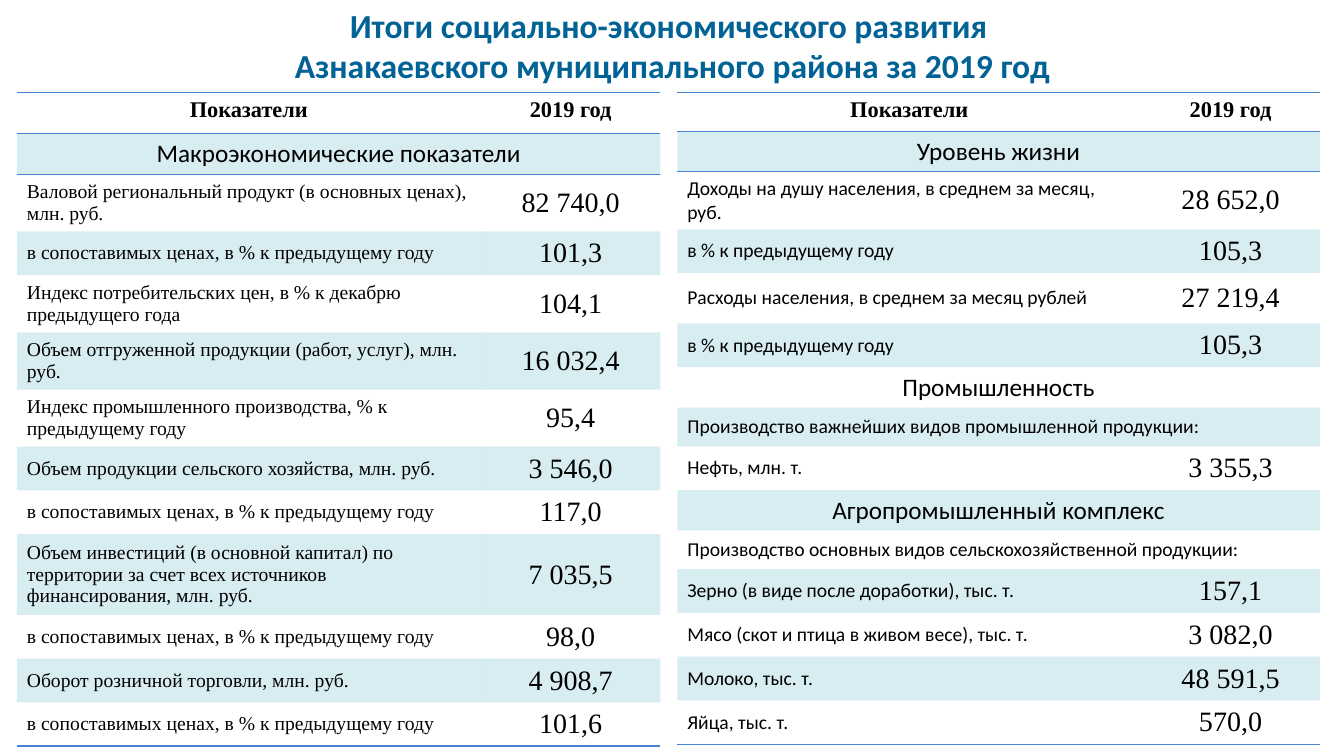
from dataclasses import dataclass
from lxml.etree import SubElement
from pptx import Presentation
from pptx.dml.color import RGBColor
from pptx.enum.text import MSO_ANCHOR, MSO_AUTO_SIZE, PP_ALIGN
from pptx.oxml.ns import qn
from pptx.util import Emu, Pt


@dataclass(frozen=True)
class Theme:
    title: str = "016296"
    text: str = "000000"
    band: str = "3EA6C2"
    band_alpha: int = 20
    rule: str = "4584D3"
    rule_pt: int = 1
    title_pt: int = 24
    header_pt: int = 16
    section_pt: int = 18
    label_pt: int = 14
    value_pt: int = 20
    sans: str = "Calibri"
    serif: str = "Times New Roman"
    no_grid_style: str = "{2D5ABB26-0587-4C30-8999-92F81FD0307C}"


@dataclass(frozen=True)
class Row:
    label: str
    value: str = ""
    height: int = 39
    section: bool = False


def px(n):
    return Emu(n * 9525)


class SlideBuilder:
    def __init__(self, slide, theme):
        self.s = slide
        self.theme = theme

    def format_text(self, tf, font, size, color, bold=False, align=PP_ALIGN.CENTER):
        for p in tf.paragraphs:
            p.alignment = align
            for r in p.runs:
                r.font.name = font
                r.font.size = Pt(size)
                r.font.bold = bold
                r.font.color.rgb = RGBColor.from_string(color)

    def title(self, text, x, y, w, h):
        sp = self.s.shapes.title
        sp.left, sp.top, sp.width, sp.height = px(x), px(y), px(w), px(h)
        tf = sp.text_frame
        tf.text = text
        tf.word_wrap = False
        tf.auto_size = MSO_AUTO_SIZE.SHAPE_TO_FIT_TEXT
        tf.vertical_anchor = MSO_ANCHOR.TOP
        self.format_text(tf, self.theme.sans, self.theme.title_pt, self.theme.title, True)

    def border(self, cell, side):
        tcPr = cell._tc.get_or_add_tcPr()
        ln = SubElement(tcPr, qn(f"a:ln{side}"), w=str(Pt(self.theme.rule_pt)))
        fill = SubElement(ln, qn("a:solidFill"))
        SubElement(fill, qn("a:srgbClr"), val=self.theme.rule)

    def band(self, cell):
        cell.fill.solid()
        cell.fill.fore_color.rgb = RGBColor.from_string(self.theme.band)
        for clr in cell._tc.tcPr.find(qn("a:solidFill")):
            SubElement(clr, qn("a:alpha"), val=str(self.theme.band_alpha * 1000))

    def cell_text(self, cell, text, font, size, bold=False, align=PP_ALIGN.CENTER):
        cell.text_frame.text = text
        self.format_text(cell.text_frame, font, size, self.theme.text, bold, align)

    def table(self, rows, x, y, widths, label_font):
        th = self.theme
        height = sum(row.height for row in rows)
        gf = self.s.shapes.add_table(len(rows), len(widths), px(x), px(y), px(sum(widths)), px(height))
        for style in gf._element.iter(qn("a:tableStyleId")):
            style.text = th.no_grid_style
        table = gf.table
        table.first_row = table.horz_banding = False
        for column, width in zip(table.columns, widths):
            column.width = px(width)
        for i, row in enumerate(rows):
            table.rows[i].height = px(row.height)
            label, value = table.cell(i, 0), table.cell(i, 1)
            if not row.value:
                label.merge(value)
            for cell in (label, value):
                cell.vertical_anchor = MSO_ANCHOR.TOP if i < 2 else MSO_ANCHOR.MIDDLE
                if i < 2:
                    self.border(cell, "T")
                if i < 2 or i == len(rows) - 1:
                    self.border(cell, "B")
                if i % 2:
                    self.band(cell)
                else:
                    cell.fill.background()
            if i == 0:
                self.cell_text(label, row.label, th.serif, th.header_pt, True)
                self.cell_text(value, row.value, th.serif, th.header_pt, True)
            elif row.section:
                self.cell_text(label, row.label, th.sans, th.section_pt)
            else:
                self.cell_text(label, row.label, label_font, th.label_pt, align=PP_ALIGN.LEFT)
                if row.value:
                    self.cell_text(value, row.value, th.serif, th.value_pt)


COMPARABLE = "в сопоставимых ценах, в % к предыдущему году"
PREVIOUS_YEAR = "в % к предыдущему году"

MACRO_ROWS = [
    Row("Показатели", "2019 год"),
    Row("Макроэкономические показатели", section=True),
    Row("Валовой региональный продукт (в основных ценах), млн. руб.", "82 740,0"),
    Row(COMPARABLE, "101,3"),
    Row("Индекс потребительских цен, в % к декабрю предыдущего года", "104,1"),
    Row("Объем отгруженной продукции (работ, услуг), млн. руб.", "16 032,4"),
    Row("Индекс промышленного производства, % к предыдущему году", "95,4"),
    Row("Объем продукции сельского хозяйства, млн. руб.", "3 546,0"),
    Row(COMPARABLE, "117,0"),
    Row("Объем инвестиций (в основной капитал) по территории за счет всех "
        "источников финансирования, млн. руб.", "7 035,5"),
    Row(COMPARABLE, "98,0"),
    Row("Оборот розничной торговли, млн. руб.", "4 908,7"),
    Row(COMPARABLE, "101,6"),
]

SECTOR_ROWS = [
    Row("Показатели", "2019 год", 37),
    Row("Уровень жизни", height=38, section=True),
    Row("Доходы на душу населения, в среднем за месяц, руб.", "28 652,0", 55),
    Row(PREVIOUS_YEAR, "105,3", 41),
    Row("Расходы населения, в среднем за месяц рублей", "27 219,4", 48),
    Row(PREVIOUS_YEAR, "105,3", 41),
    Row("Промышленность", height=38, section=True),
    Row("Производство важнейших видов промышленной продукции:", height=37),
    Row("Нефть, млн. т.", "3 355,3", 41),
    Row("Агропромышленный комплекс", height=38, section=True),
    Row("Производство основных видов сельскохозяйственной продукции:", height=37),
    Row("Зерно (в виде после доработки), тыс. т.", "157,1", 41),
    Row("Мясо (скот и птица в живом весе), тыс. т.", "3 082,0", 41),
    Row("Молоко, тыс. т.", "48 591,5", 41),
    Row("Яйца, тыс. т.", "570,0", 41),
]


def main():
    prs = Presentation()
    prs.slide_width, prs.slide_height = px(1280), px(720)
    theme = Theme()
    builder = SlideBuilder(prs.slides.add_slide(prs.slide_layouts[5]), theme)
    builder.title("Итоги социально-экономического развития \n"
                  "Азнакаевского муниципального района за 2019 год", 268, 0, 745, 87)
    builder.table(MACRO_ROWS, 16, 88, (442, 171), theme.serif)
    builder.table(SECTOR_ROWS, 645, 88, (442, 170), theme.sans)
    prs.save("out.pptx")


if __name__ == "__main__":
    main()
